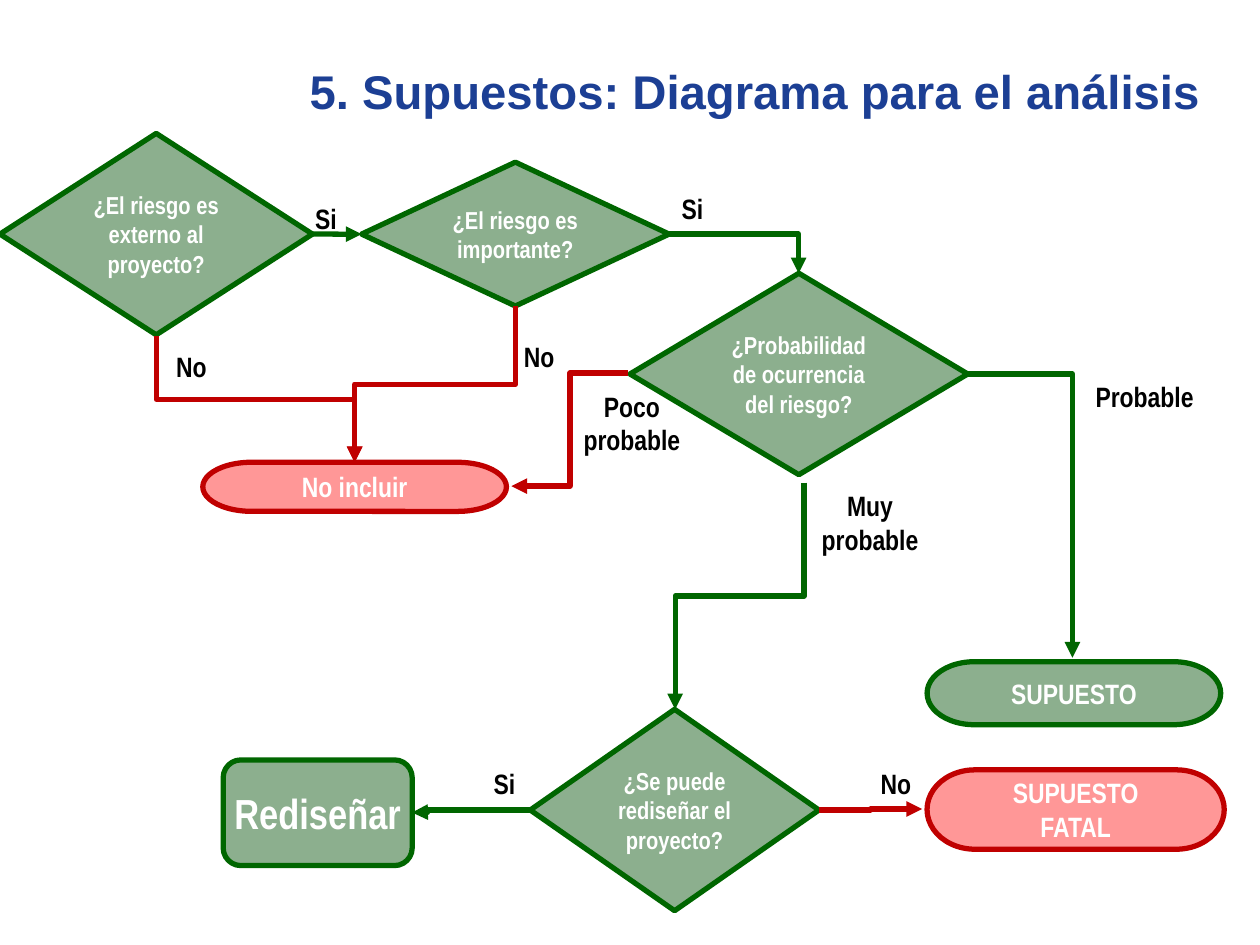
from lxml import etree
from pptx import Presentation
from pptx import util as u
from pptx.dml.color import RGBColor
from pptx.enum import shapes, text
from pptx.oxml.ns import qn

GREEN, RED = "006600", "C00000"
FILLS = {GREEN: "8CAF8E", RED: "FF9797"}
WHITE, BLACK, BLUE = "FFFFFF", "000000", "1C3F94"

TITLE = "5. Supuestos: Diagrama para el análisis"
DECISION = shapes.MSO_SHAPE.FLOWCHART_DECISION
TERMINATOR = shapes.MSO_SHAPE.FLOWCHART_TERMINATOR
PROCESS = shapes.MSO_SHAPE.FLOWCHART_ALTERNATE_PROCESS

NODES = {
    "external": ("¿El riesgo es externo al proyecto?", DECISION, GREEN, 14, (0, 2.69, 6.3, 4.06)),
    "important": ("¿El riesgo es importante?", DECISION, GREEN, 14, (7.29, 3.27, 6.2, 2.9)),
    "likelihood": ("¿Probabilidad de ocurrencia del riesgo?", DECISION, GREEN, 14, (12.7, 5.51, 6.81, 4.06)),
    "redesignable": ("¿Se puede rediseñar el proyecto?", DECISION, GREEN, 14, (10.69, 14.3, 5.82, 4.06)),
    "exclude": ("No incluir", TERMINATOR, RED, 16, (4.09, 9.32, 6.12, 0.99)),
    "assumption": ("SUPUESTO", TERMINATOR, GREEN, 16, (18.69, 13.34, 5.92, 1.27)),
    "redesign": ("Rediseñar", PROCESS, GREEN, 24, (4.5, 15.32, 3.81, 2.13)),
    "fatal": ("SUPUESTO\nFATAL", TERMINATOR, RED, 16, (18.69, 15.52, 5.99, 1.6)),
}

ELBOWS = [
    ("corner", GREEN, (13.49, 4.72), (16.1, 5.51), None),
    ("corner", GREEN, (19.51, 7.54), (21.62, 13.26), None),
    ("vertical", GREEN, (16.21, 9.73), (13.61, 14.3), 0.5),
    ("vertical", RED, (10.39, 6.17), (7.15, 9.32), 0.5),
    ("vertical", RED, (3.15, 6.78), (7.15, 9.32), 0.5),
    ("horizontal", RED, (12.67, 7.52), (10.31, 9.8), 0.5),
    ("horizontal", RED, (16.51, 16.33), (18.59, 16.31), 0.5),
    ("horizontal", GREEN, (10.69, 16.33), (8.31, 16.38), 0.87),
]

LABELS = [
    ("Si", (6.1, 3.94, 0.94, 0.94)),
    ("Si", (13.49, 3.73, 0.94, 0.94)),
    ("No", (3.3, 6.93, 1.12, 0.94)),
    ("No", (10.31, 6.73, 1.12, 0.94)),
    ("Poco\nprobable", (11.51, 7.72, 2.46, 1.63)),
    ("Probable", (20.75, 7.52, 4.65, 0.94)),
    ("Muy\nprobable", (16.31, 9.73, 2.46, 1.63)),
    ("Si", (9.7, 15.32, 0.94, 0.94)),
    ("No", (17.5, 15.32, 1.12, 0.94)),
]


def color(value):
    return RGBColor.from_string(value)


def lengths(values):
    return [u.Cm(value) for value in values]


def write(shape, wording, size, ink, font="Arial Narrow", align=text.PP_ALIGN.CENTER):
    shape.text_frame.text = wording
    for paragraph in shape.text_frame.paragraphs:
        paragraph.alignment = align
        for run in paragraph.runs:
            run.font.name = font
            run.font.size = u.Pt(size)
            run.font.bold = True
            run.font.color.rgb = color(ink)


def add_title(slide):
    title = slide.shapes.title
    title.left, title.top, title.width, title.height = lengths((5.99, 1.12, 19.25, 1.42))
    write(title, TITLE, 27, BLUE, "Arial", text.PP_ALIGN.LEFT)
    title.text_frame.auto_size = text.MSO_AUTO_SIZE.NONE
    title.text_frame.vertical_anchor = text.MSO_ANCHOR.MIDDLE


def add_node(slide, wording, kind, line, size, box):
    shape = slide.shapes.add_shape(kind, *lengths(box))
    shape.shadow.inherit = False
    shape.fill.solid()
    shape.fill.fore_color.rgb = color(FILLS[line])
    shape.line.color.rgb = color(line)
    shape.line.width = u.Pt(3)
    write(shape, wording, size, WHITE)
    shape.text_frame.word_wrap = kind == DECISION
    shape.text_frame.vertical_anchor = text.MSO_ANCHOR.MIDDLE
    return shape


def add_label(slide, wording, box):
    label = slide.shapes.add_textbox(*lengths(box))
    write(label, wording, 16, BLACK)
    label.text_frame.word_wrap = False


def style_arrow(connector, line):
    connector.line.color.rgb = color(line)
    connector.line.width = u.Pt(3)
    properties = connector._element.spPr
    etree.SubElement(properties.find(qn("a:ln")), qn("a:tailEnd"), type="triangle")
    etree.SubElement(properties, qn("a:effectLst"))


def add_elbow(slide, route, line, start, end, bend):
    (x1, y1), (x2, y2) = start, end
    if route == "vertical":
        middle_x, middle_y = (x1 + x2) / 2, (y1 + y2) / 2
        half_run, half_rise = abs(y2 - y1) / 2, abs(x2 - x1) / 2
        left, right = middle_x - half_run, middle_x + half_run
        begin_x, end_x = (right, left) if x2 > x1 else (left, right)
        ends = (begin_x, middle_y - half_rise, end_x, middle_y + half_rise)
    else:
        ends = (x1, y1, x2, y2)
    connector = slide.shapes.add_connector(shapes.MSO_CONNECTOR.ELBOW, *lengths(ends))
    properties = connector._element.spPr
    geometry = properties.find(qn("a:prstGeom"))
    if route == "vertical":
        degrees = 270 if x2 > x1 else 90
        properties.find(qn("a:xfrm")).set("rot", str(degrees * 60000))
    if route == "corner":
        geometry.set("prst", "bentConnector2")
    else:
        adjustments = geometry.find(qn("a:avLst"))
        etree.SubElement(adjustments, qn("a:gd"), name="adj1", fmla=f"val {round(bend * 100000)}")
    style_arrow(connector, line)


def main():
    presentation = Presentation()
    presentation.slide_width, presentation.slide_height = lengths((25.4, 19.05))
    slide = presentation.slides.add_slide(presentation.slide_layouts[5])
    add_title(slide)
    nodes = {name: add_node(slide, *node) for name, node in NODES.items()}
    straight = slide.shapes.add_connector(shapes.MSO_CONNECTOR.STRAIGHT, 0, 0, 0, 0)
    straight.begin_connect(nodes["external"], 3)
    straight.end_connect(nodes["important"], 1)
    style_arrow(straight, GREEN)
    for elbow in ELBOWS:
        add_elbow(slide, *elbow)
    for label in LABELS:
        add_label(slide, *label)
    presentation.save("out.pptx")


if __name__ == "__main__":
    main()
